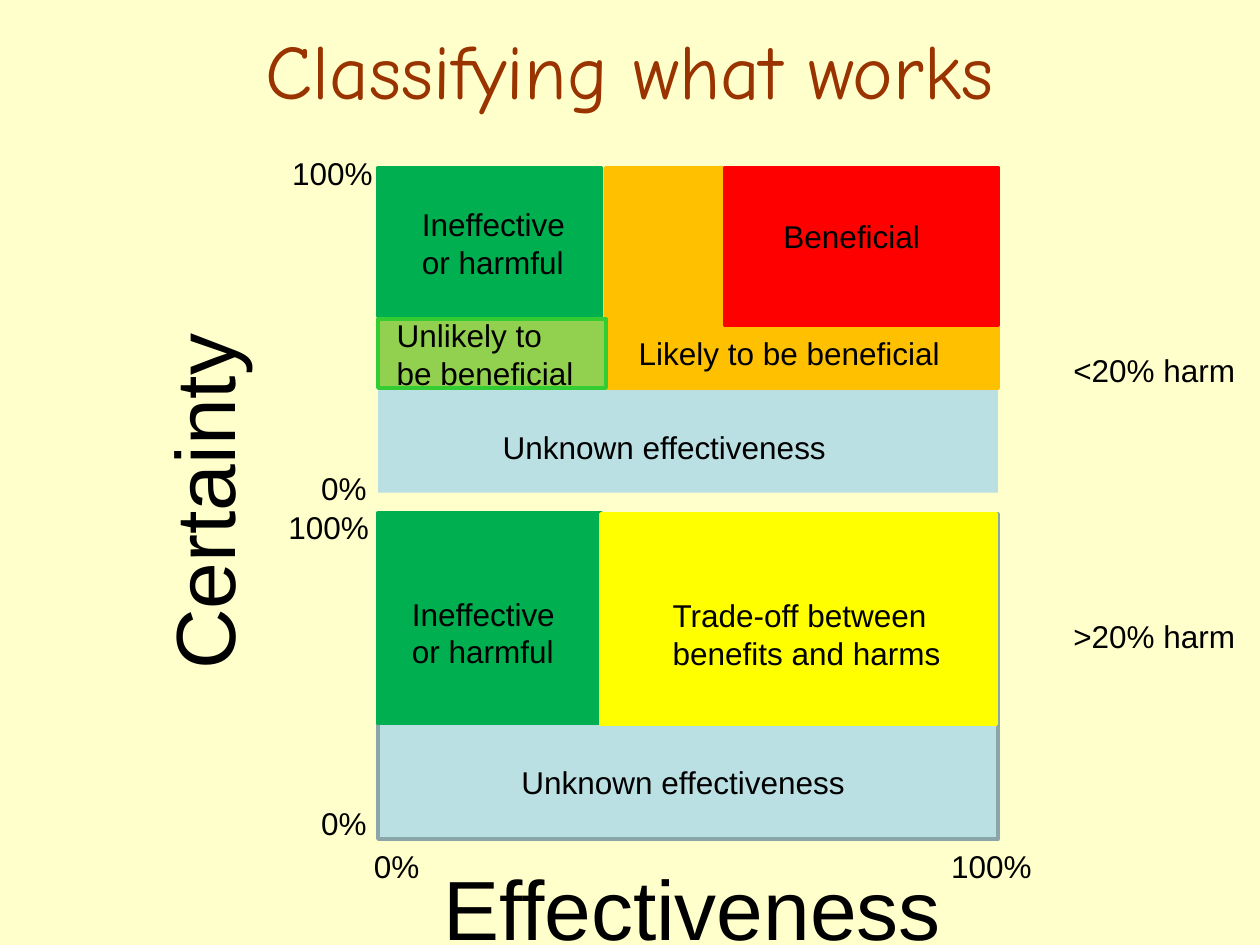
from dataclasses import dataclass

from pptx import Presentation
from pptx.dml.color import RGBColor
from pptx.enum.shapes import MSO_SHAPE
from pptx.enum.text import MSO_ANCHOR, MSO_AUTO_SIZE, PP_ALIGN
from pptx.util import Inches, Pt


@dataclass(frozen=True)
class Theme:
    background: str = "FFFFCC"
    title: str = "993300"
    text: str = "000000"
    unknown: str = "BBE0E3"
    unknown_edge: str = "8AA6A8"
    harmful: str = "00B050"
    unlikely: str = "92D050"
    unlikely_edge: str = "33CC33"
    likely: str = "FFC000"
    beneficial: str = "FF0000"
    trade_off: str = "FFFF00"
    title_font: str = "Comic Neue"
    body_font: str = "Arial"
    title_size: int = 44
    axis_size: int = 48
    label_size: int = 18
    edge_width: int = 2


@dataclass(frozen=True)
class Box:
    left: float
    top: float
    width: float
    height: float

    def inside(self, left, top, width, height):
        return Box(self.left + left, self.top + top, width, height)

    def lengths(self):
        return [Inches(side) for side in (self.left, self.top, self.width, self.height)]


THEME = Theme()


def style_text(frame, font_name, size, color):
    for para in frame.paragraphs:
        for span in para.runs:
            span.font.name = font_name
            span.font.size = Pt(size)
            span.font.color.rgb = RGBColor.from_string(color)


def add_title(page, box, text):
    title = page.shapes.title
    title.left, title.top, title.width, title.height = box.lengths()
    frame = title.text_frame
    frame.text = text
    frame.auto_size = MSO_AUTO_SIZE.NONE
    frame.vertical_anchor = MSO_ANCHOR.MIDDLE
    frame.paragraphs[0].alignment = PP_ALIGN.CENTER
    style_text(frame, THEME.title_font, THEME.title_size, THEME.title)


def add_label(page, box, text, size=THEME.label_size, rotation=0):
    label = page.shapes.add_textbox(*box.lengths())
    label.rotation = rotation
    frame = label.text_frame
    frame.text = text
    frame.word_wrap = False
    frame.auto_size = MSO_AUTO_SIZE.SHAPE_TO_FIT_TEXT
    style_text(frame, THEME.body_font, size, THEME.text)


def add_zone(page, box, fill, edge=None):
    zone = page.shapes.add_shape(MSO_SHAPE.RECTANGLE, *box.lengths())
    zone.shadow.inherit = False
    zone.fill.solid()
    zone.fill.fore_color.rgb = RGBColor.from_string(fill)
    if edge:
        zone.line.color.rgb = RGBColor.from_string(edge)
        zone.line.width = Pt(THEME.edge_width)
    else:
        zone.line.fill.background()


def add_low_harm_panel(page, box):
    add_zone(page, box, THEME.unknown)
    add_zone(page, box.inside(1.81, 0, 3.11, 1.75), THEME.likely, THEME.likely)
    add_zone(page, box.inside(2.75, 0, 2.17, 1.25), THEME.beneficial, THEME.beneficial)
    add_zone(page, box.inside(0, 0, 1.77, 1.18), THEME.harmful, THEME.harmful)
    add_zone(page, box.inside(0, 1.2, 1.81, 0.55), THEME.unlikely, THEME.unlikely_edge)
    add_label(page, box.inside(3.12, 0.34, 1.3, 0.4), "Beneficial")
    add_label(page, box.inside(1.97, 1.27, 2.61, 0.4), "Likely to be beneficial")
    add_label(page, box.inside(0.25, 0.25, 1.42, 0.71), "Ineffective\nor harmful")
    add_label(page, box.inside(0.05, 1.13, 1.62, 0.71), "Unlikely to\nbe beneficial")
    add_label(page, box.inside(0.89, 2.02, 2.79, 0.4), "Unknown effectiveness")
    add_label(page, box.inside(-0.78, -0.16, 0.87, 0.4), "100%")
    add_label(page, box.inside(-0.55, 2.34, 0.63, 0.4), "0%")
    add_label(page, box.inside(5.42, 1.41, 1.5, 0.4), "<20% harm")


def add_high_harm_panel(page, box):
    add_zone(page, box, THEME.unknown, THEME.unknown_edge)
    add_zone(page, box.inside(0, -0.01, 1.77, 1.67), THEME.harmful, THEME.harmful)
    add_zone(page, box.inside(1.77, 0, 3.14, 1.67), THEME.trade_off, THEME.trade_off)
    add_label(page, box.inside(0.17, 0.59, 1.42, 0.71), "Ineffective\nor harmful")
    add_label(page, box.inside(2.24, 0.6, 2.35, 0.71), "Trade-off between\nbenefits and harms")
    add_label(page, box.inside(1.04, 1.93, 2.79, 0.4), "Unknown effectiveness")
    add_label(page, box.inside(-0.81, -0.1, 0.89, 0.4), "100%")
    add_label(page, box.inside(-0.55, 2.25, 0.63, 0.4), "0%")
    add_label(page, box.inside(5.42, 0.77, 1.5, 0.4), ">20% harm")


def add_axes(page, box):
    add_label(page, box.inside(-0.13, 5.34, 0.63, 0.4), "0%")
    add_label(page, box.inside(4.45, 5.34, 0.88, 0.4), "100%")
    add_label(page, box.inside(0.42, 5.42, 4.2, 0.91), "Effectiveness", THEME.axis_size)
    add_label(page, box.inside(-2.84, 2.18, 2.9, 0.91), "Certainty", THEME.axis_size, 270)


def main():
    deck = Presentation()
    deck.slide_width, deck.slide_height = Inches(10), Inches(7.5)
    page = deck.slides.add_slide(deck.slide_layouts.get_by_name("Title Only"))
    page.background.fill.solid()
    page.background.fill.fore_color.rgb = RGBColor.from_string(THEME.background)
    add_title(page, Box(0.5, -0.08, 9, 1.25), "Classifying what works")
    add_low_harm_panel(page, Box(3, 1.33, 4.92, 2.58))
    add_high_harm_panel(page, Box(3, 4.08, 4.92, 2.58))
    add_axes(page, Box(3, 1.33, 4.92, 5.33))
    deck.save("out.pptx")


if __name__ == "__main__":
    main()
